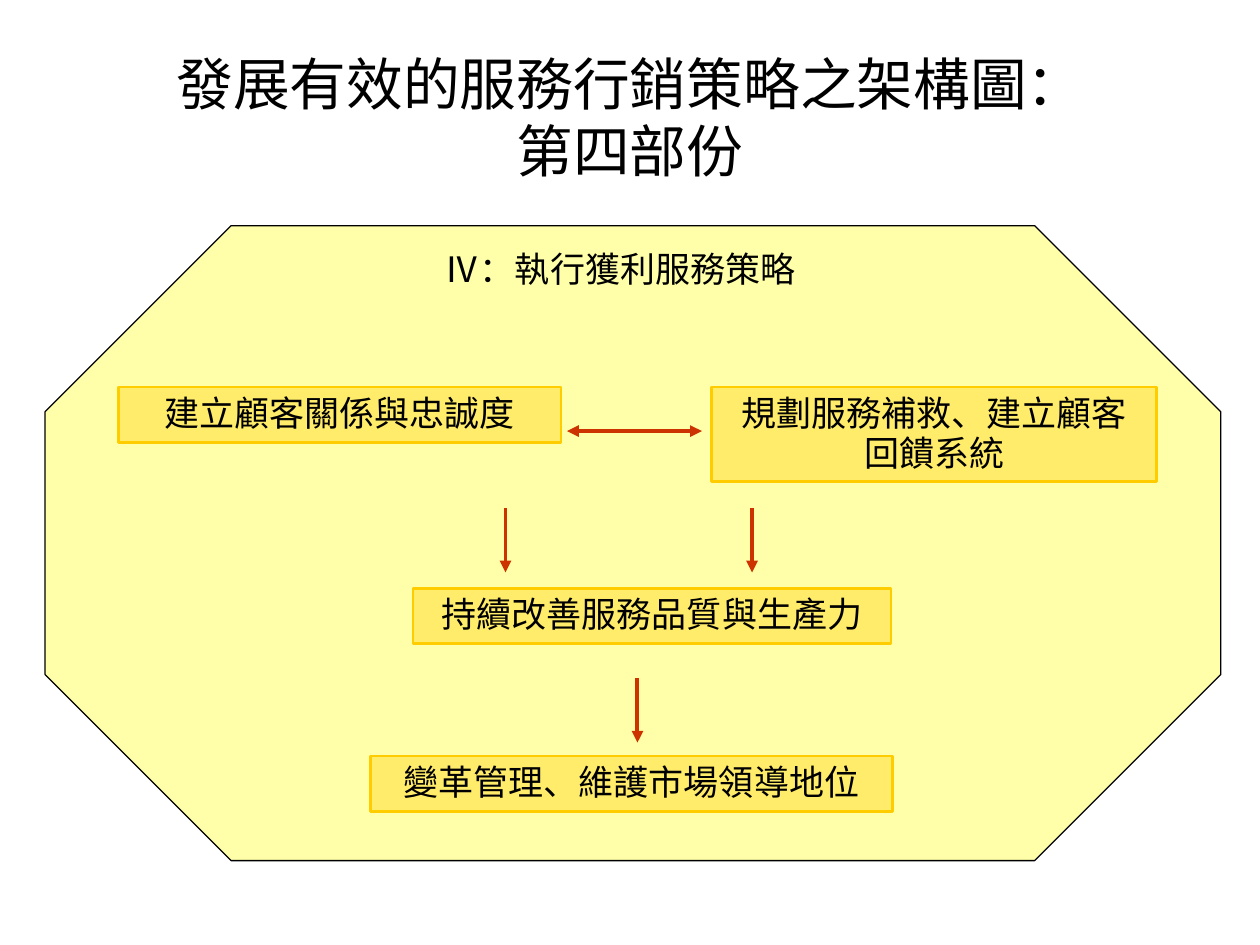
from dataclasses import dataclass

from lxml.etree import SubElement
from pptx import Presentation
from pptx.dml.color import RGBColor
from pptx.enum.shapes import MSO_CONNECTOR, MSO_SHAPE
from pptx.enum.text import MSO_ANCHOR, MSO_AUTO_SIZE, PP_ALIGN
from pptx.oxml.ns import qn
from pptx.util import Cm, Pt


@dataclass(frozen=True)
class Theme:
    ink: RGBColor = RGBColor(0x00, 0x00, 0x00)
    panel: RGBColor = RGBColor(0xFF, 0xFF, 0x99)
    step: RGBColor = RGBColor(0xFF, 0xCC, 0x00)
    arrow: RGBColor = RGBColor(0xCC, 0x33, 0x00)
    title_size: Pt = Pt(32.4)
    title_leading: Pt = Pt(38.3)
    body_size: Pt = Pt(20)
    body_leading: Pt = Pt(23)
    title_font: str = "Calibri"
    body_font: str = "Noto Sans CJK SC"


theme = Theme()


def write(holder, wording, size, leading, font, anchor):
    frame = holder.text_frame
    frame.text = wording
    frame_format = {"word_wrap": True, "auto_size": MSO_AUTO_SIZE.NONE,
                    "vertical_anchor": anchor}
    for key, value in frame_format.items():
        setattr(frame, key, value)
    paragraph = frame.paragraphs[0]
    paragraph.alignment = PP_ALIGN.CENTER
    paragraph.line_spacing = leading
    for run in paragraph.runs:
        for key, value in {"size": size, "name": font, "bold": False}.items():
            setattr(run.font, key, value)
        run.font.color.rgb = theme.ink
        # East Asian typeface
        SubElement(run.font._element, qn("a:ea"), typeface=theme.body_font)


def paint(shape, color, opacity, outline, width):
    shape.shadow.inherit = False
    shape.fill.solid()
    shape.fill.fore_color.rgb = color
    tint = shape.fill._xPr.find(qn("a:solidFill"))[0]
    SubElement(tint, qn("a:alpha"), val=str(opacity * 1000))
    shape.line.color.rgb = outline
    shape.line.width = width


deck = Presentation()
deck.slide_width, deck.slide_height = Cm(25.4), Cm(19.05)
slide = deck.slides.add_slide(deck.slide_layouts[5])

# Title
title = slide.shapes.title
title_place = {"left": Cm(1.27), "top": Cm(0.76), "width": Cm(22.86), "height": Cm(3.18)}
for key, value in title_place.items():
    setattr(title, key, value)
write(title, "發展有效的服務行銷策略之架構圖：\v第四部份", theme.title_size,
      theme.title_leading, theme.title_font, MSO_ANCHOR.MIDDLE)

# Octagonal panel with its heading
diagram = slide.shapes.add_group_shape().shapes
panel = diagram.add_shape(MSO_SHAPE.OCTAGON, Cm(0.91), Cm(4.55), Cm(23.7), Cm(12.8))
panel.adjustments[0] = 0.293
paint(panel, theme.panel, 84, theme.ink, Pt(0.75))

heading = diagram.add_textbox(Cm(5.56), Cm(4.9), Cm(13.89), Cm(1.09))
write(heading, "Ⅳ：執行獲利服務策略", theme.body_size, theme.body_leading,
      theme.body_font, MSO_ANCHOR.TOP)

# Strategy steps: wording, left, top, width, height
steps = [
    ("建立顧客關係與忠誠度", 2.39, 7.8, 8.92, 1.12),
    ("規劃服務補救、建立顧客回饋系統", 14.35, 7.8, 8.97, 1.91),
    ("持續改善服務品質與生產力", 8.33, 11.86, 9.63, 1.12),
    ("變革管理、維護市場領導地位", 7.47, 15.24, 10.52, 1.12),
]
for wording, *place in steps:
    step = diagram.add_shape(MSO_SHAPE.RECTANGLE, *map(Cm, place))
    paint(step, theme.step, 37, theme.step, Pt(1.5))
    write(step, wording, theme.body_size, theme.body_leading,
          theme.body_font, MSO_ANCHOR.TOP)

# Arrows: start x, start y, end x, end y, arrowhead ends
drop = 1.3
arrows = [(x, y, x, y + drop, ["tailEnd"])
          for x, y in [(10.19, 10.24), (15.16, 10.24), (12.85, 13.67)]]
arrows.append((11.43, 8.69, 14.15, 8.69, ["headEnd", "tailEnd"]))
for *points, ends in arrows:
    arrow = diagram.add_connector(MSO_CONNECTOR.STRAIGHT, *map(Cm, points))
    arrow.line.color.rgb = theme.arrow
    arrow.line.width = Pt(2.25)
    outline = arrow.line._get_or_add_ln()
    for end in ends:
        SubElement(outline, qn(f"a:{end}"), type="triangle")
    SubElement(arrow._element.spPr, qn("a:effectLst"))

deck.save("out.pptx")
